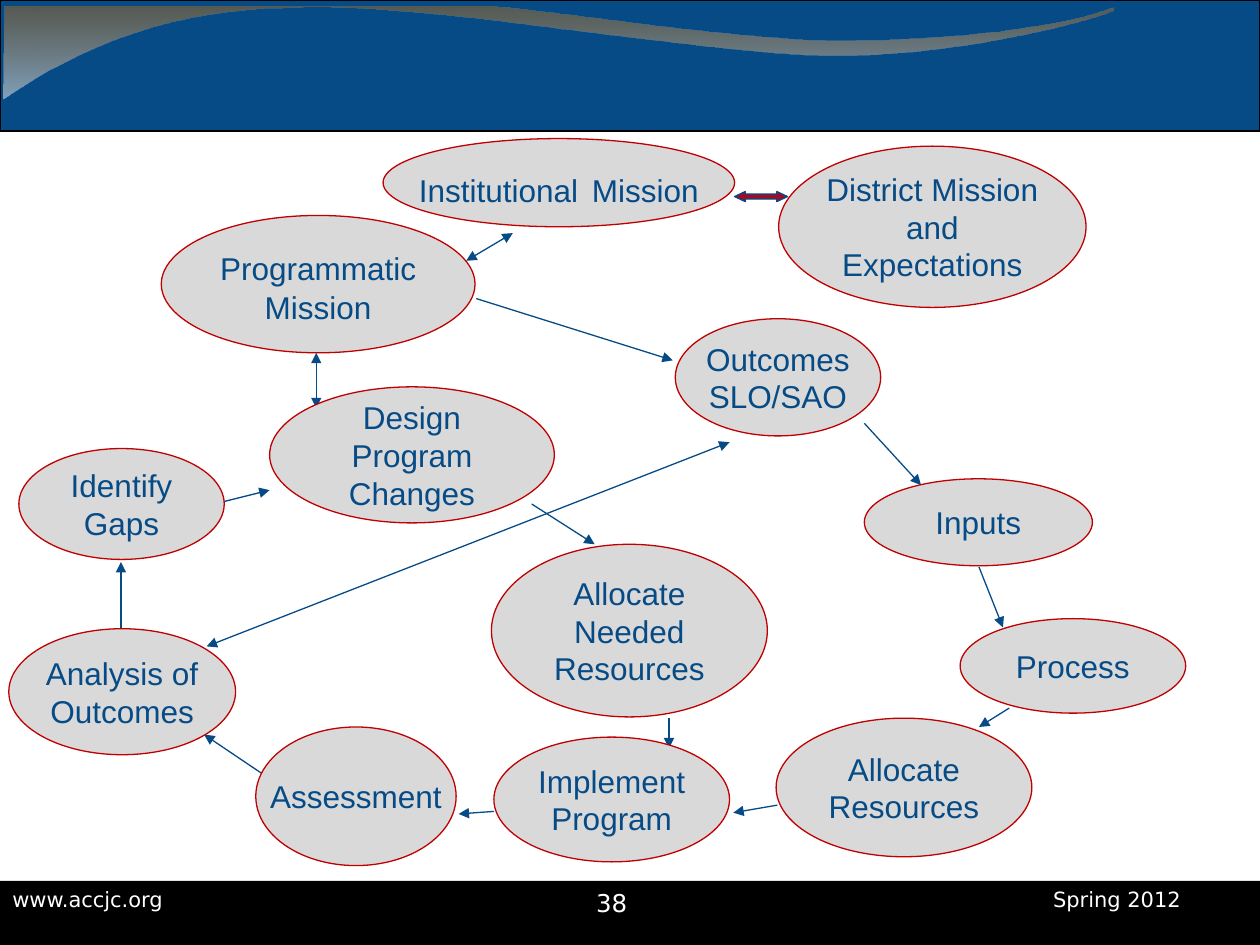
from lxml.etree import SubElement
from pptx import Presentation
from pptx.dml.color import RGBColor
from pptx.enum.shapes import MSO_CONNECTOR, MSO_SHAPE
from pptx.enum.text import MSO_ANCHOR, PP_ALIGN
from pptx.oxml.ns import qn
from pptx.util import Inches, Pt


def rgb(value):
    return RGBColor.from_string(value)


def draw_arrows(arrows):
    for x1, y1, x2, y2, ends in arrows:
        arrow = slide.shapes.add_connector(
            MSO_CONNECTOR.STRAIGHT, Inches(x1), Inches(y1), Inches(x2), Inches(y2))
        arrow.line.color.rgb = rgb(BLUE)
        arrow.line.width = Pt(0.75)
        for end in ends:
            SubElement(arrow.line._get_or_add_ln(), qn(f"a:{end}"), type="triangle")
        SubElement(arrow._element.spPr, qn("a:effectLst"))


BLUE, BLACK, WHITE = "064B86", "000000", "FFFFFF"
GREY, RED, DARK_RED = "D9D9D9", "C00000", "A00C26"
ONE_WAY, BOTH_WAYS = ["tailEnd"], ["headEnd", "tailEnd"]

presentation = Presentation()
presentation.slide_width = Inches(10)
presentation.slide_height = Inches(7.5)
slide = presentation.slides.add_slide(presentation.slide_layouts[6])
styled_fonts = []

for left, top, width, height, fill in [
    (0, 6.99, 10, 0.51, BLACK),
    (0, 0, 10, 1.04, BLUE),
]:
    band = slide.shapes.add_shape(
        MSO_SHAPE.RECTANGLE, Inches(left), Inches(top), Inches(width), Inches(height))
    band.shadow.inherit = False
    band.fill.solid()
    band.fill.fore_color.rgb = rgb(fill)
    band.line.color.rgb = rgb(BLACK)
    band.line.width = Pt(1.5)
    if fill == BLACK:
        band.line.fill.background()

wave_points = [
    (3.91, 0.05),
    (4.31, 0.07), (5.89, 0.32), (6.71, 0.32),
    (7.52, 0.32), (8.46, 0.21), (8.83, 0.06),
    (8.83, 0.14), (8.84, 0), (8.84, 0.08),
    (8.68, 0.15), (7.68, 0.44), (6.6, 0.44),
    (5.51, 0.43), (3.4, 0.01), (2.3, 0.06),
    (1.18, 0.07), (0.44, 0.5), (0.03, 0.78),
]
outline = slide.shapes.build_freeform(Inches(0.04), Inches(0.05), scale=1.0)
outline.add_line_segments([(Inches(x), Inches(y)) for x, y in wave_points], close=True)
wave = outline.convert_to_shape()
segments = list(wave._element.iter(qn("a:lnTo")))
for first in range(1, len(wave_points), 3):
    curve = SubElement(segments[first].getparent(), qn("a:cubicBezTo"))
    segments[first].addprevious(curve)
    for segment in segments[first:first + 3]:
        curve.append(segment[0])
        segment.getparent().remove(segment)
wave.shadow.inherit = False
wave.line.fill.background()
wave.fill.gradient()
wave.fill.gradient_angle = 270
for stop, color, alpha in zip(
        wave.fill.gradient_stops, ["B56405", "E7E7E7"], ["45000", "55000"]):
    stop.color.rgb = rgb(color)
    SubElement(stop._gs.find(qn("a:srgbClr")), qn("a:alpha"), val=alpha)

for text, left, top, width, height, size, align in [
    ("www.accjc.org \tSpring 2012", 0, 6.99, 10, 0.3, 12, PP_ALIGN.LEFT),
    ("38", 4.03, 7, 1.65, 0.42, 14, PP_ALIGN.CENTER),
]:
    footer = slide.shapes.add_textbox(
        Inches(left), Inches(top), Inches(width), Inches(height)).text_frame
    footer.word_wrap = True
    paragraph = footer.paragraphs[0]
    paragraph.alignment = align
    if "\t" in text:
        tabs = SubElement(paragraph._p.get_or_add_pPr(), qn("a:tabLst"))
        SubElement(tabs, qn("a:tab"), pos=str(Inches(8.26)), algn="l")
    run = paragraph.add_run()
    run.text = text
    styled_fonts.append((run.font, "DejaVu Sans", size, WHITE))

draw_arrows([
    (4.07, 1.85, 3.7, 2.07, BOTH_WAYS),
    (6.86, 3.36, 7.31, 3.85, ONE_WAY),
    (7.77, 4.5, 7.96, 4.98, ONE_WAY),
    (8.01, 5.62, 7.77, 5.77, ONE_WAY),
    (6.17, 6.39, 5.82, 6.45, ONE_WAY),
    (3.92, 6.44, 3.64, 6.46, ONE_WAY),
    (2.08, 6.14, 1.62, 5.83, ONE_WAY),
    (0.96, 4.99, 0.96, 4.46, ONE_WAY),
    (1.78, 3.98, 2.14, 3.89, ONE_WAY),
    (2.51, 3.24, 2.51, 2.8, BOTH_WAYS),
    (5.31, 5.7, 5.31, 5.94, ONE_WAY),
    (1.64, 5.13, 5.79, 3.51, BOTH_WAYS),
])

tight = {"margin_left": 0, "margin_right": 0, "margin_top": 0, "margin_bottom": 0,
         "word_wrap": True, "vertical_anchor": MSO_ANCHOR.TOP}
for lines, left, top, width, height, space_size, frame_format in [
    (["Institutional Mission"], 3.04, 1.1, 2.79, 0.7, 28, {}),
    (["Programmatic Mission"], 1.28, 1.71, 2.49, 1.09, 22, {"word_wrap": True}),
    (["Outcomes", "SLO/SAO"], 5.36, 2.53, 1.63, 0.93, 18, {}),
    (["Inputs"], 6.86, 3.8, 1.81, 0.69, 18, {}),
    (["Process"], 7.62, 4.91, 1.79, 0.75, 18, {}),
    (["Allocate", "Resources"], 6.16, 5.7, 2.03, 1.1, 18, {}),
    (["Implement", "Program"], 3.92, 5.85, 1.87, 0.99, 18, {}),
    (["Assessment"], 2.03, 5.77, 1.59, 1.1, 18, {}),
    (["Analysis of", "Outcomes"], 0.07, 4.99, 1.8, 1, 18, {}),
    (["Identify", "Gaps"], 0.15, 3.56, 1.63, 0.88, 18, {}),
    (["Design", "Program", "Changes"], 2.14, 3.07, 2.26, 1.08, 18, {}),
    (["Allocate", "Needed", "Resources"], 3.9, 4.32, 2.19, 1.37, 18, {}),
    (["District Mission", "and Expectations"], 6.18, 1.16, 2.44, 1.28, 18, tight),
]:
    stage = slide.shapes.add_shape(
        MSO_SHAPE.OVAL, Inches(left), Inches(top), Inches(width), Inches(height))
    stage.shadow.inherit = False
    stage.fill.solid()
    stage.fill.fore_color.rgb = rgb(GREY)
    stage.line.color.rgb = rgb(RED)
    stage.line.width = Pt(0.75)
    frame = stage.text_frame
    defaults = {"word_wrap": False, "vertical_anchor": MSO_ANCHOR.MIDDLE}
    for name, value in (defaults | frame_format).items():
        setattr(frame, name, value)
    for index, line in enumerate(lines):
        paragraph = frame.add_paragraph() if index else frame.paragraphs[0]
        paragraph.alignment = PP_ALIGN.CENTER
        for part in [line] if space_size == 18 else line.partition(" "):
            run = paragraph.add_run()
            run.text = part
            size = space_size if part == " " else 18
            styled_fonts.append((run.font, "Arial", size, BLUE))

mission_link = slide.shapes.add_shape(
    MSO_SHAPE.LEFT_RIGHT_ARROW, Inches(5.83), Inches(1.52), Inches(0.42), Inches(0.08))
mission_link.shadow.inherit = False
mission_link.adjustments[0] = 0.5
mission_link.adjustments[1] = 1.06
mission_link.fill.solid()
mission_link.fill.fore_color.rgb = rgb(DARK_RED)
mission_link.line.color.rgb = rgb(BLUE)
mission_link.line.width = Pt(0.75)

draw_arrows([
    (3.78, 2.37, 5.34, 2.86, ONE_WAY),
    (4.22, 4, 4.72, 4.32, ONE_WAY),
])

for font, typeface, size, color in styled_fonts:
    for name, value in {"name": typeface, "size": Pt(size)}.items():
        setattr(font, name, value)
    font.color.rgb = rgb(color)

presentation.save("out.pptx")
